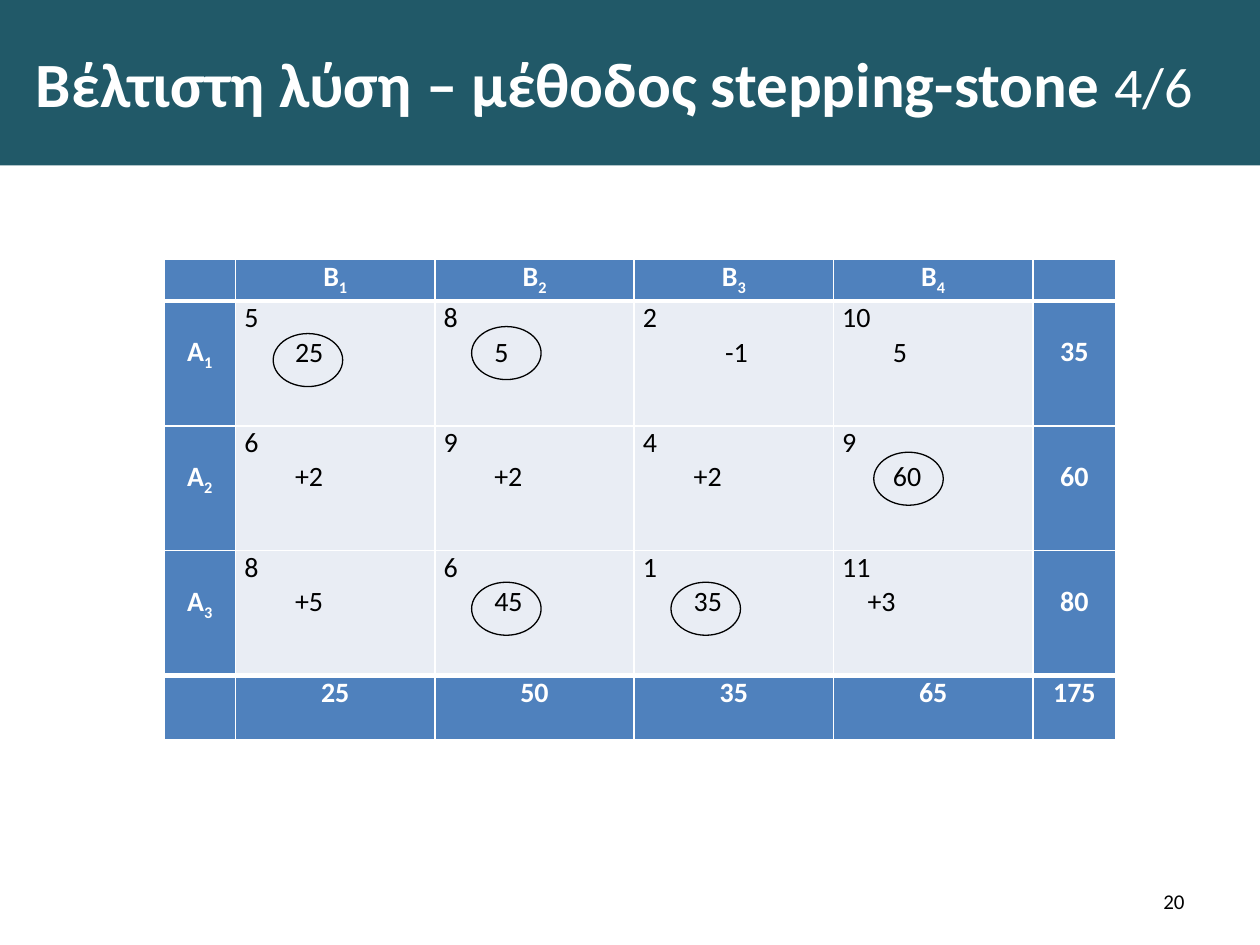
from lxml import etree
from pptx import Presentation
from pptx.dml.color import RGBColor
from pptx.enum.shapes import MSO_SHAPE
from pptx.enum.text import MSO_ANCHOR, PP_ALIGN
from pptx.oxml.ns import qn
from pptx.util import Pt

RECTANGLE, OVAL = MSO_SHAPE.RECTANGLE, MSO_SHAPE.OVAL
LEFT, CENTER, RIGHT = PP_ALIGN.LEFT, PP_ALIGN.CENTER, PP_ALIGN.RIGHT
MIDDLE = MSO_ANCHOR.MIDDLE

FONT = "Calibri"
TEAL, BLUE, PALE, WHITE, BLACK = "215968", "4F81BD", "E9EDF4", "FFFFFF", "000000"

COLUMNS = [41] + [113.9] * 4 + [47.5]
ROWS = [23.8] + [71.3] * 3 + [36.7]
LINE = 19.5  # height of one line of table text
NEAR, USUAL, FAR = 14.5, 29, 47  # indents of the value under a cost

# Each route: unit cost, allocation or index, indent of the latter
ROUTES = [
    [("5", "25", USUAL), ("8", "5", USUAL), ("2", "-1", FAR), ("10", "5", USUAL)],
    [("6", "+2", USUAL), ("9", "+2", USUAL), ("4", "+2", USUAL), ("9", "60", USUAL)],
    [("8", "+5", USUAL), ("6", "45", USUAL), ("1", "35", USUAL), ("11", "+3", NEAR)],
]
SUPPLY = ["35", "60", "80"]
DEMAND = ["25", "50", "35", "65", "175"]

# Circled allocations: table row, table column, offset from the cell's corner
CIRCLES = [(2, 4, 23, 15), (3, 2, 21, 18), (1, 2, 21, 14.5), (3, 3, 21, 18), (1, 1, 21.5, 18.5)]


def color(hex_value):
    return RGBColor.from_string(hex_value)


def add_run(paragraph, text, size, hex_value, bold=False, subscript=False):
    run = paragraph.add_run()
    run.text = text
    run.font.name = FONT
    run.font.size = Pt(size)
    run.font.bold = bold
    run.font.color.rgb = color(hex_value)
    if subscript:
        run.font._element.set("baseline", "-25000")


def add_title(slide, left, top, width, height):
    band = slide.shapes.add_shape(RECTANGLE, Pt(left), Pt(top), Pt(width), Pt(height))
    band.shadow.inherit = False
    band.fill.solid()
    band.fill.fore_color.rgb = color(TEAL)
    band.line.fill.background()
    band.text_frame.vertical_anchor = MIDDLE
    paragraph = band.text_frame.paragraphs[0]
    paragraph.alignment = LEFT
    paragraph._p.get_or_add_pPr().set("marL", str(Pt(13.5)))
    add_run(paragraph, "Βέλτιστη λύση – μέθοδος stepping-stone ", 36, WHITE, bold=True)
    add_run(paragraph, "4/6", 32, WHITE)


def add_page_number(slide, left, top, width, height):
    frame = slide.shapes.add_textbox(Pt(left), Pt(top), Pt(width), Pt(height)).text_frame
    frame.word_wrap = True
    frame.vertical_anchor = MIDDLE
    frame.paragraphs[0].alignment = RIGHT
    add_run(frame.paragraphs[0], "20", 12, BLACK)


def style_cell(cell, fill, borders):
    """Borders maps L, R, T and B to widths in points."""
    cell.margin_left = cell.margin_right = Pt(5)
    cell.margin_top = cell.margin_bottom = 0
    properties = cell._tc.get_or_add_tcPr()
    for side, width in borders.items():
        line = etree.SubElement(properties, qn(f"a:ln{side}"), w=str(Pt(width)))
        solid = etree.SubElement(line, qn("a:solidFill"))
        etree.SubElement(solid, qn("a:srgbClr"), val=WHITE)
    cell.fill.solid()
    cell.fill.fore_color.rgb = color(fill)


def fill_heading(cell, text, subscript="", lowered=False):
    """Writes a bold centred heading, one line down when lowered."""
    if lowered:
        cell.margin_top = Pt(LINE)
    paragraph = cell.text_frame.paragraphs[0]
    paragraph.alignment = CENTER
    add_run(paragraph, text, 16, WHITE, bold=True)
    if subscript:
        add_run(paragraph, subscript, 16, WHITE, bold=True, subscript=True)


def fill_route(cell, cost, value, indent):
    frame = cell.text_frame
    add_run(frame.paragraphs[0], cost, 16, BLACK)
    value_line = frame.add_paragraph()
    value_line._p.get_or_add_pPr().set("marL", str(Pt(indent)))
    add_run(value_line, value, 16, BLACK)


def add_transport_table(slide, left, top):
    table = slide.shapes.add_table(len(ROWS), len(COLUMNS), Pt(left), Pt(top),
                                   Pt(sum(COLUMNS)), Pt(sum(ROWS))).table
    for column, width in zip(table.columns, COLUMNS):
        column.width = Pt(width)
    for row, height in zip(table.rows, ROWS):
        row.height = Pt(height)

    last_row, last_column = len(ROWS) - 1, len(COLUMNS) - 1
    for r in range(len(ROWS)):
        for c in range(len(COLUMNS)):
            is_route = 0 < r < last_row and 0 < c < last_column
            borders = {"L": 1, "R": 1,
                       "T": 3 if r in (1, last_row) else 1,
                       "B": 3 if r in (0, last_row - 1) else 1}
            style_cell(table.cell(r, c), PALE if is_route else BLUE, borders)

    for c in range(1, last_column):
        fill_heading(table.cell(0, c), "Β", str(c))
    for r, (routes, supply) in enumerate(zip(ROUTES, SUPPLY), 1):
        fill_heading(table.cell(r, 0), "Α", str(r), lowered=True)
        for c, route in enumerate(routes, 1):
            fill_route(table.cell(r, c), *route)
        fill_heading(table.cell(r, last_column), supply, lowered=True)
    for c, demand in enumerate(DEMAND, 1):
        fill_heading(table.cell(last_row, c), demand)


def add_circles(slide, table_left, table_top):
    for row, column, dx, dy in CIRCLES:
        left = table_left + sum(COLUMNS[:column]) + dx
        top = table_top + sum(ROWS[:row]) + dy
        circle = slide.shapes.add_shape(OVAL, Pt(left), Pt(top), Pt(39.7), Pt(30.3))
        circle.shadow.inherit = False
        circle.fill.background()
        circle.line.color.rgb = color(BLACK)
        circle.line.width = Pt(0.75)


def main():
    presentation = Presentation()
    presentation.slide_width, presentation.slide_height = Pt(720), Pt(540)
    slide = presentation.slides.add_slide(presentation.slide_layouts[6])
    add_title(slide, 0, 0, 720, 94.5)
    add_page_number(slide, 516, 500.5, 168, 28.8)
    table_corner = 93.6, 148.3
    add_transport_table(slide, *table_corner)
    add_circles(slide, *table_corner)
    presentation.save("out.pptx")


if __name__ == "__main__":
    main()
